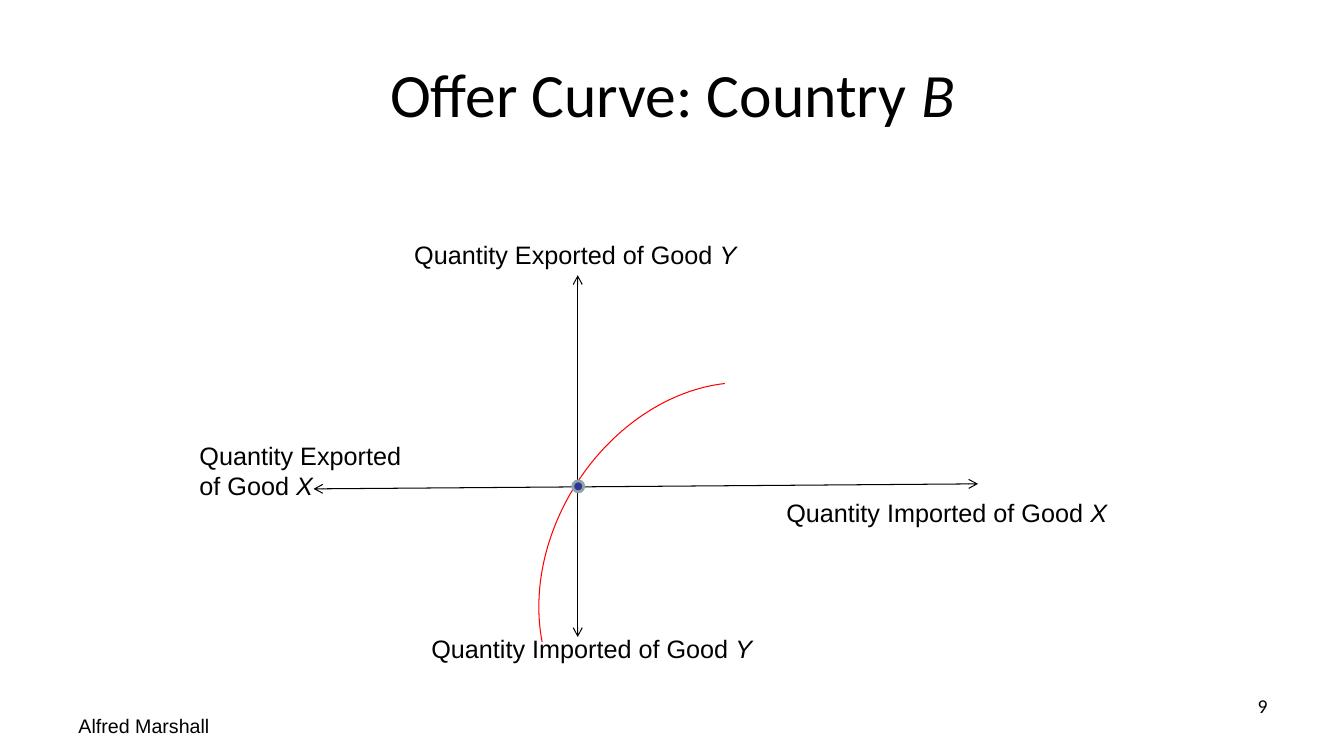
from lxml import etree
from pptx import Presentation
from pptx.dml.color import RGBColor
from pptx.enum.shapes import MSO_CONNECTOR, MSO_SHAPE
from pptx.enum.text import MSO_ANCHOR, PP_ALIGN
from pptx.oxml.ns import qn
from pptx.util import Emu, Pt

PX = 9144  # EMU per px, 100 px to the inch
COLORS = {"text": "000000", "axis": "000000", "curve": "FF0000",
          "dot": "333399", "ring": "8AA6A8"}


def px(*lengths):
    return [Emu(n * PX) for n in lengths]


def color(name):
    return RGBColor.from_string(COLORS[name])


def set_line(line, name, width):
    line.color.rgb = color(name)
    line.width = Pt(width)


def add_text(slide, box, text, italic="", size=18, font="Arial",
             align=PP_ALIGN.LEFT, anchor=MSO_ANCHOR.TOP):
    """Text box with an upright run and an optional italic one."""
    tf = slide.shapes.add_textbox(*px(*box)).text_frame
    tf.word_wrap = True
    tf.vertical_anchor = anchor
    p = tf.paragraphs[0]
    p.alignment = align
    for part, slanted in ((text, False), (italic, True)):
        if part:
            r = p.add_run()
            r.text = part
            r.font.name = font
            r.font.size = Pt(size)
            r.font.italic = slanted
            r.font.color.rgb = color("text")


def add_axis(slide, ends):
    """Line with an open arrowhead at both ends."""
    axis = slide.shapes.add_connector(MSO_CONNECTOR.STRAIGHT, *px(*ends))
    set_line(axis.line, "axis", 0.75)
    ln = axis.line._get_or_add_ln()
    for end in ("a:headEnd", "a:tailEnd"):
        etree.SubElement(ln, qn(end)).set("type", "arrow")
    etree.SubElement(axis._element.spPr, qn("a:effectLst"))


def add_offer_curve(slide, box, rotation, angles):
    sp = slide.shapes.add_shape(MSO_SHAPE.ARC, *px(*box))
    sp.shadow.inherit = False
    sp.rotation = rotation
    for i, angle in enumerate(angles):
        sp.adjustments[i] = angle * 0.6  # degrees in 60000ths over 100000
    sp.fill.background()
    set_line(sp.line, "curve", 0.75)


def add_dot(slide, box):
    sp = slide.shapes.add_shape(MSO_SHAPE.OVAL, *px(*box))
    sp.shadow.inherit = False
    sp.fill.solid()
    sp.fill.fore_color.rgb = color("dot")
    set_line(sp.line, "ring", 2)


def main():
    prs = Presentation()
    prs.slide_width, prs.slide_height = px(1333, 750)
    slide = prs.slides.add_slide(prs.slide_layouts[6])

    # Title and footer
    add_text(slide, (67, 30, 1200, 125), "Offer Curve: Country ", "B", 44,
             "Calibri", PP_ALIGN.CENTER, MSO_ANCHOR.MIDDLE)
    add_text(slide, (68, 703, 212, 32), "Alfred Marshall", size=14)

    # Offer curve and axes
    add_offer_curve(slide, (506, 410, 389, 307), 302, (213.74, 333.74))
    for ends in ((311, 485, 970, 480), (573, 273, 573, 632)):
        add_axis(slide, ends)

    # Axis labels
    for box, flow, good in (
        ((401, 233, 359, 40), "Exported", "Y"),
        ((418, 623, 359, 40), "Imported", "Y"),
        ((770, 488, 359, 40), "Imported", "X"),
        ((188, 432, 238, 71), "Exported", "X"),
    ):
        add_text(slide, box, f"Quantity {flow} of Good ", good)

    # Origin and slide number
    add_dot(slide, (568, 477, 11, 11))
    add_text(slide, (1154, 683, 113, 52), "9", size=14, font="Calibri",
             align=PP_ALIGN.RIGHT)

    prs.save("out.pptx")


if __name__ == "__main__":
    main()
